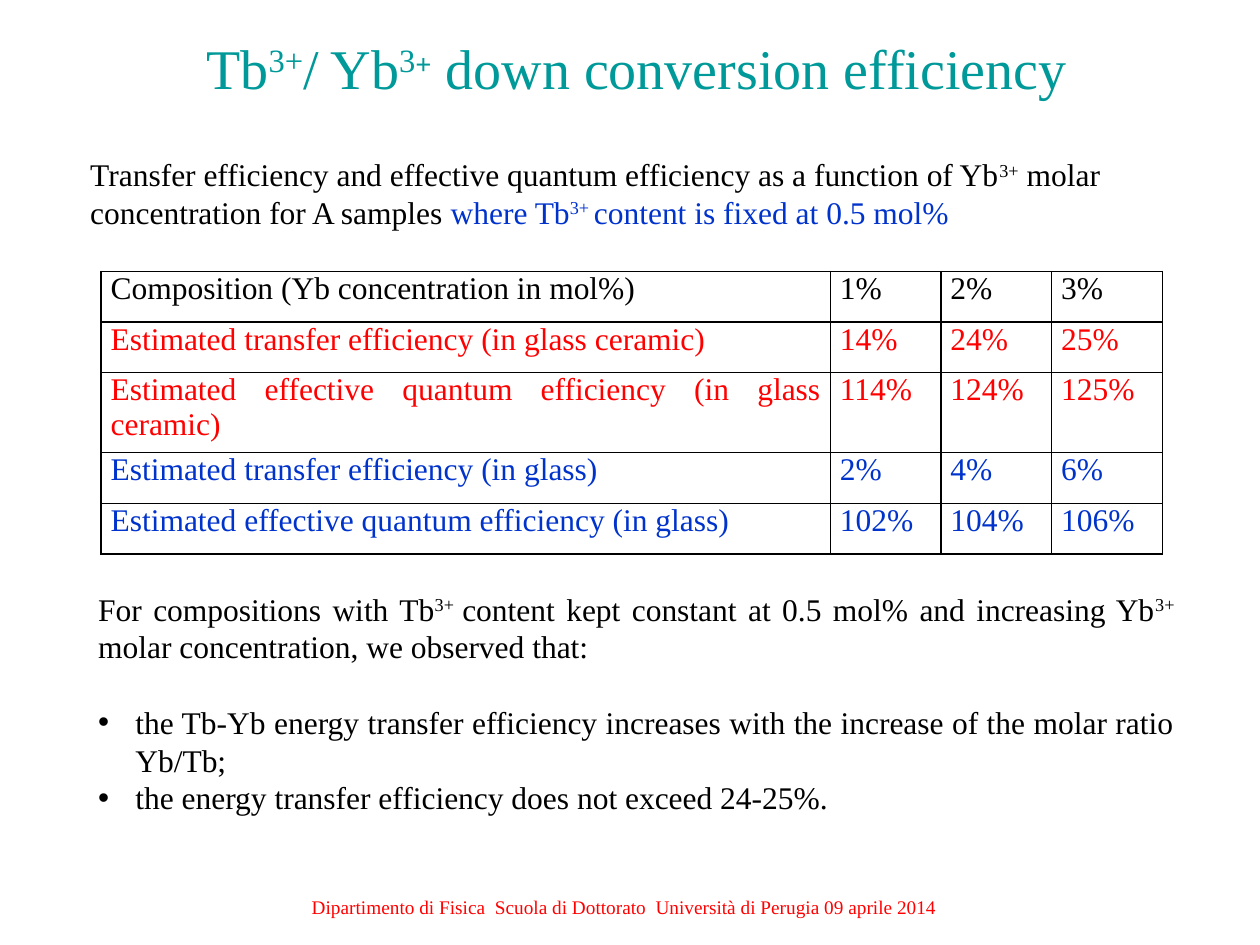
from lxml import etree
from pptx import Presentation
from pptx.dml.color import RGBColor
from pptx.enum.text import MSO_ANCHOR, PP_ALIGN
from pptx.oxml.ns import qn
from pptx.util import Cm, Pt

LEFT, MID, JUST = PP_ALIGN.LEFT, PP_ALIGN.CENTER, PP_ALIGN.JUSTIFY
TOP, CENTRE = MSO_ANCHOR.TOP, MSO_ANCHOR.MIDDLE
BLACK = RGBColor(0, 0, 0)
WHITE = RGBColor(255, 255, 255)
RED = RGBColor(255, 0, 0)
BLUE = RGBColor(0, 0x33, 0xCC)
TEAL = RGBColor(0, 0x99, 0x99)
FACE = "Times New Roman"
SIDES = ("a:lnL", "a:lnR", "a:lnT", "a:lnB")

ROWS = [
    ("Composition (Yb concentration in mol%)", "1%", "2%", "3%"),
    ("Estimated transfer efficiency (in glass ceramic)", "14%", "24%", "25%"),
    ("Estimated effective quantum efficiency (in glass ceramic)", "114%", "124%", "125%"),
    ("Estimated transfer efficiency (in glass)", "2%", "4%", "6%"),
    ("Estimated effective quantum efficiency (in glass)", "102%", "104%", "106%"),
]
INKS = (BLACK, RED, RED, BLUE, BLUE)


def put(item, form):
    """Set each format value on an item."""
    for name, value in form.items():
        setattr(item, name, value)


def write(para, runs, size=18, ink=BLACK, **form):
    """Fill a paragraph with (text, raised, changes) runs."""
    put(para, form)
    for text, up, diff in runs:
        run = para.add_run()
        run.text = text
        look = {"name": FACE, "size": Pt(size), "bold": False, **diff}
        tint = look.pop("ink", ink)
        put(run.font, look)
        run.font.color.rgb = tint
        if up:
            run.font._element.set("baseline", "30000")


def add_box(slide, box, anchor=TOP):
    """Add a wrapping text box and return its frame."""
    frame = slide.shapes.add_textbox(*map(Cm, box)).text_frame
    put(frame, {"word_wrap": True, "vertical_anchor": anchor})
    return frame


def add_mark(para):
    """Give a paragraph a hanging bullet."""
    props = para._p.get_or_add_pPr()
    put_at = {"marL": Cm(0.75), "indent": Cm(-0.75)}
    for name, value in put_at.items():
        props.set(name, str(int(value)))
    etree.SubElement(props, qn("a:buFont")).set("typeface", "Arial")
    etree.SubElement(props, qn("a:buChar")).set("char", "•")


def add_title(slide, box):
    """Place the title."""
    runs = [
        ("Tb", False, {}),
        ("3+", True, {}),
        ("/ Yb", False, {}),
        ("3", True, {}),
        ("+  ", True, {"size": Pt(28), "bold": True}),
        ("down conversion efficiency", False, {}),
    ]
    frame = add_box(slide, box, CENTRE)
    write(frame.paragraphs[0], runs, 32, TEAL, alignment=MID)


def add_intro(slide, box):
    """Place the text above the table."""
    blue = {"ink": BLUE}
    runs = [
        ("Transfer efficiency and effective quantum efficiency as a function of Yb", False, {}),
        ("3+", True, {}),
        (" molar concentration for A samples ", False, {}),
        ("where Tb", False, blue),
        ("3+ ", True, blue),
        ("content is fixed at 0.5 mol%", False, blue),
    ]
    write(add_box(slide, box).paragraphs[0], runs, alignment=LEFT)


def add_cell(cell, text, ink, fill):
    """Fill and rule one table cell."""
    put(cell, {"margin_left": Cm(0.19), "margin_right": Cm(0.19),
               "margin_top": 0, "margin_bottom": 0})
    write(cell.text_frame.paragraphs[0], [(text, False, {})], ink=ink,
          alignment=JUST, space_after=Pt(6))
    props = cell._tc.get_or_add_tcPr()
    for side in SIDES:
        line = etree.SubElement(props, qn(side), w=str(int(Pt(1))))
        solid = etree.SubElement(line, qn("a:solidFill"))
        etree.SubElement(solid, qn("a:srgbClr"), val=str(BLACK))
    if fill:
        cell.fill.solid()
        cell.fill.fore_color.rgb = fill
    else:
        cell.fill.background()


def add_grid(slide, box):
    """Place the efficiency table."""
    grid = slide.shapes.add_table(len(ROWS), len(ROWS[0]), *map(Cm, box)).table
    put(grid, {"first_row": False, "horz_banding": False})
    small, tall = 2.23, 1.61
    for i, col in enumerate(grid.columns):
        col.width = Cm(small if i else box[2] - 3 * small)
    for i, row in enumerate(grid.rows):
        row.height = Cm(tall if i == 2 else (box[3] - tall) / 4)
        for cell, text in zip(row.cells, ROWS[i]):
            add_cell(cell, text, INKS[i], WHITE if i else None)


def add_notes(slide, box):
    """Place the findings below the table."""
    frame = add_box(slide, box)
    runs = [
        ("For compositions with Tb", False, {}),
        ("3+ ", True, {}),
        ("content kept constant at 0.5 mol% and increasing Yb", False, {}),
        ("3+", True, {}),
        (" molar concentration, we observed that:", False, {}),
    ]
    write(frame.paragraphs[0], runs, alignment=JUST, space_after=Pt(21.5))
    for text in (
        "the Tb-Yb energy transfer efficiency increases with the increase of the molar ratio Yb/Tb;",
        "the energy transfer efficiency does not exceed 24-25%.",
    ):
        para = frame.add_paragraph()
        add_mark(para)
        write(para, [(text, False, {})], alignment=JUST)


def add_foot(slide, box):
    """Place the footer line."""
    text = "Dipartimento di Fisica  Scuola di Dottorato  Università di Perugia 09 aprile 2014"
    write(add_box(slide, box).paragraphs[0], [(text, False, {})], 11, RED, alignment=MID)


def main():
    """Build and save the slide."""
    deck = Presentation()
    put(deck, {"slide_width": Cm(25.4), "slide_height": Cm(19.05)})
    slide = deck.slides.add_slide(deck.slide_layouts[6])
    add_foot(slide, (2.49, 17.93, 20.19, 0.74))
    add_intro(slide, (1.57, 3, 22.61, 2.57))
    add_notes(slide, (1.73, 11.76, 22.2, 4.83))
    add_grid(slide, (2.04, 5.47, 21.39, 5.7))
    add_title(slide, (1.5, 0.53, 22.68, 1.63))
    deck.save("out.pptx")


if __name__ == "__main__":
    main()
